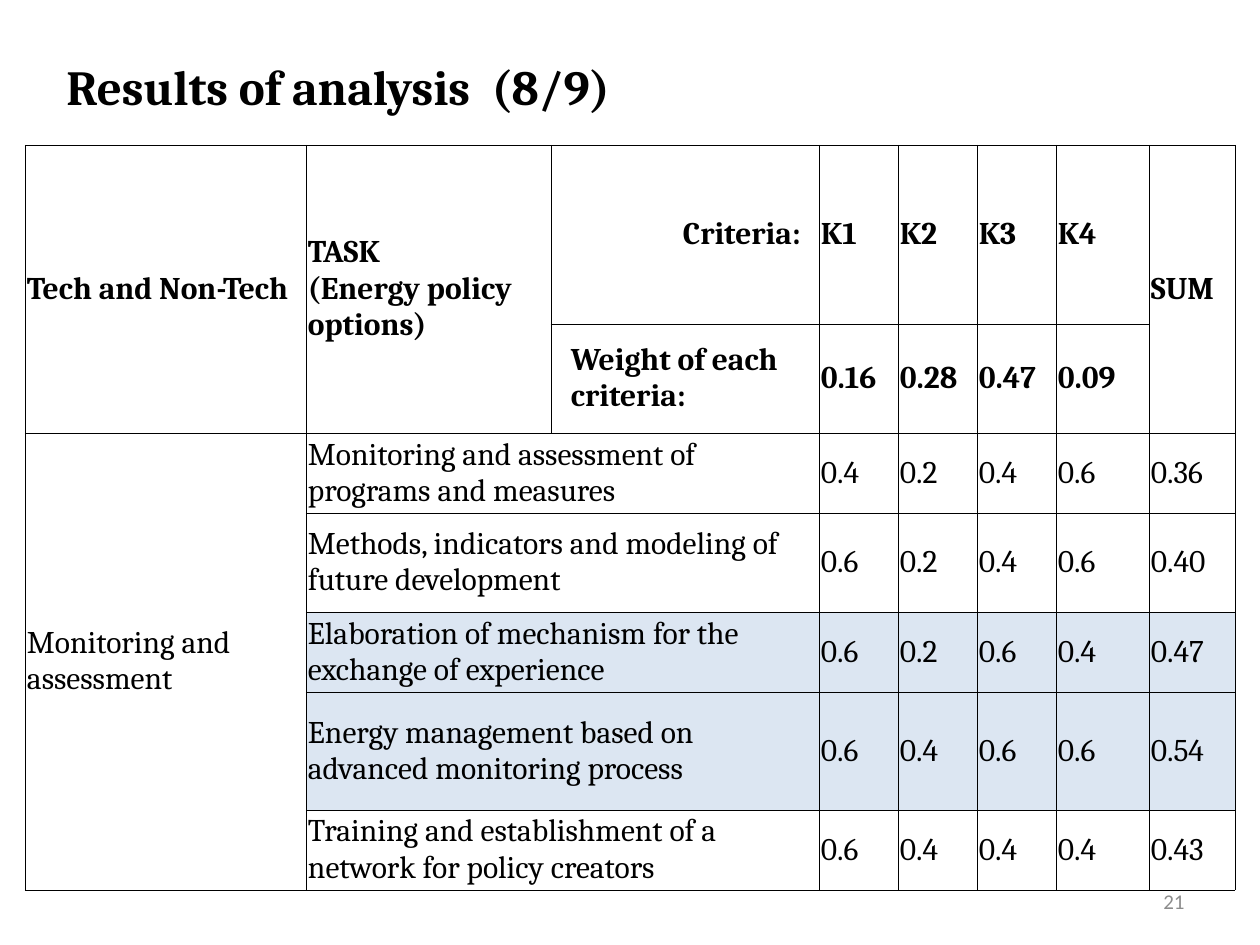
from lxml.etree import SubElement
from pptx import Presentation
from pptx.dml.color import RGBColor
from pptx.enum.text import MSO_ANCHOR as ANCHOR, PP_ALIGN as ALIGN
from pptx.oxml.ns import qn
from pptx.util import Emu, Pt

TITLE = "Results of analysis  (8/9)"
PAGE = "21"
CRITERIA = ["K1", "K2", "K3", "K4"]
WEIGHTS = ["0.16", "0.28", "0.47", "0.09"]
GROUP = "Monitoring and assessment"
# task, scores K1 to K4 and sum, highlighted
TASKS = [
    ("Monitoring and assessment of programs and measures",
     ["0.4", "0.2", "0.4", "0.6", "0.36"], False),
    ("Methods, indicators and modeling of future development",
     ["0.6", "0.2", "0.4", "0.6", "0.40"], False),
    ("Elaboration of mechanism for the exchange of experience",
     ["0.6", "0.2", "0.6", "0.4", "0.47"], True),
    ("Energy management based on advanced monitoring process",
     ["0.6", "0.4", "0.6", "0.6", "0.54"], True),
    ("Training and establishment of a network for policy creators",
     ["0.6", "0.4", "0.4", "0.4", "0.43"], False),
]
HEADER = [
    ["Tech and Non-Tech", "TASK\n(Energy policy options)", "Criteria:", *CRITERIA, "SUM"],
    ["", "", "Weight of each criteria:", *WEIGHTS, ""],
]
BODY = [[GROUP if i == 0 else "", task, "", *scores]
        for i, (task, scores, _) in enumerate(TASKS)]
ROWS = HEADER + BODY
HIGHLIGHTED = [False] * len(HEADER) + [t[2] for t in TASKS]

COL_WIDTHS = [281, 245, 268, 79, 79, 79, 93, 86]
ROW_HEIGHTS = [179, 100, 80, 99, 80, 118, 80]
INDENTS = {(0, 2): 130, (1, 2): 18}
# first row, first column, last row, last column
MERGES = [(0, 0, 1, 0), (0, 1, 1, 1), (0, 7, 1, 7), (2, 0, 6, 0)]
MERGES += [(r, 1, r, 2) for r in range(len(HEADER), len(ROWS))]

BLACK, GREY, PALE_BLUE = "000000", "8C8C8C", "DCE6F2"


def px(n):
    return Emu(round(n * 914400 / 126))


def color(hex_text):
    return RGBColor.from_string(hex_text)


def write(tf, text, size=18, font="Cambria", fill=BLACK, bold=False,
          align=ALIGN.LEFT, indent=0):
    for i, line in enumerate(text.split("\n")):
        p = tf.add_paragraph() if i else tf.paragraphs[0]
        p.alignment = align
        if indent:
            pPr = p._p.get_or_add_pPr()
            pPr.set("marL", str(px(indent)))
            pPr.set("indent", "0")
        r = p.add_run()
        r.text = line
        r.font.size, r.font.name, r.font.bold = Pt(size), font, bold
        r.font.color.rgb = color(fill)


def add_borders(cell):
    """Draw thin black lines on all sides; they must precede the fill in tcPr."""
    tcPr = cell._tc.get_or_add_tcPr()
    for side in ("lnL", "lnR", "lnT", "lnB"):
        ln = SubElement(tcPr, qn("a:" + side), w=str(Pt(0.25)))
        SubElement(SubElement(ln, qn("a:solidFill")), qn("a:srgbClr"), val=BLACK)


def add_table(slide):
    frame = slide.shapes.add_table(len(ROWS), len(COL_WIDTHS), px(25), px(145),
                                   px(sum(COL_WIDTHS)), px(sum(ROW_HEIGHTS)))
    table = frame.table
    table.first_row = table.horz_banding = False
    for col, width in zip(table.columns, COL_WIDTHS):
        col.width = px(width)
    for row, height in zip(table.rows, ROW_HEIGHTS):
        row.height = px(height)
    for r1, c1, r2, c2 in MERGES:
        table.cell(r1, c1).merge(table.cell(r2, c2))
    for r, texts in enumerate(ROWS):
        for c, text in enumerate(texts):
            cell = table.cell(r, c)
            cell.margin_left = cell.margin_right = px(2)
            cell.margin_top = cell.margin_bottom = 0
            cell.vertical_anchor = ANCHOR.MIDDLE
            add_borders(cell)
            if HIGHLIGHTED[r] and c > 0:
                cell.fill.solid()
                cell.fill.fore_color.rgb = color(PALE_BLUE)
            else:
                cell.fill.background()
            if text:
                write(cell.text_frame, text, bold=r < len(HEADER),
                      indent=INDENTS.get((r, c), 0))


def add_text(slide, box, text, wrap=True, anchor=ANCHOR.TOP, **fmt):
    tf = slide.shapes.add_textbox(*map(px, box)).text_frame
    tf.word_wrap = wrap
    tf.vertical_anchor = anchor
    write(tf, text, **fmt)


def main():
    prs = Presentation()
    prs.slide_width, prs.slide_height = px(1260), px(945)
    slide = prs.slides.add_slide(prs.slide_layouts[6])
    add_table(slide)
    add_text(slide, (903, 876, 294, 50), PAGE, anchor=ANCHOR.MIDDLE,
             size=12, font="Calibri", fill=GREY, align=ALIGN.RIGHT)
    add_text(slide, (54, 50, 587, 72), TITLE, wrap=False, size=28, bold=True)
    prs.save("out.pptx")


if __name__ == "__main__":
    main()
